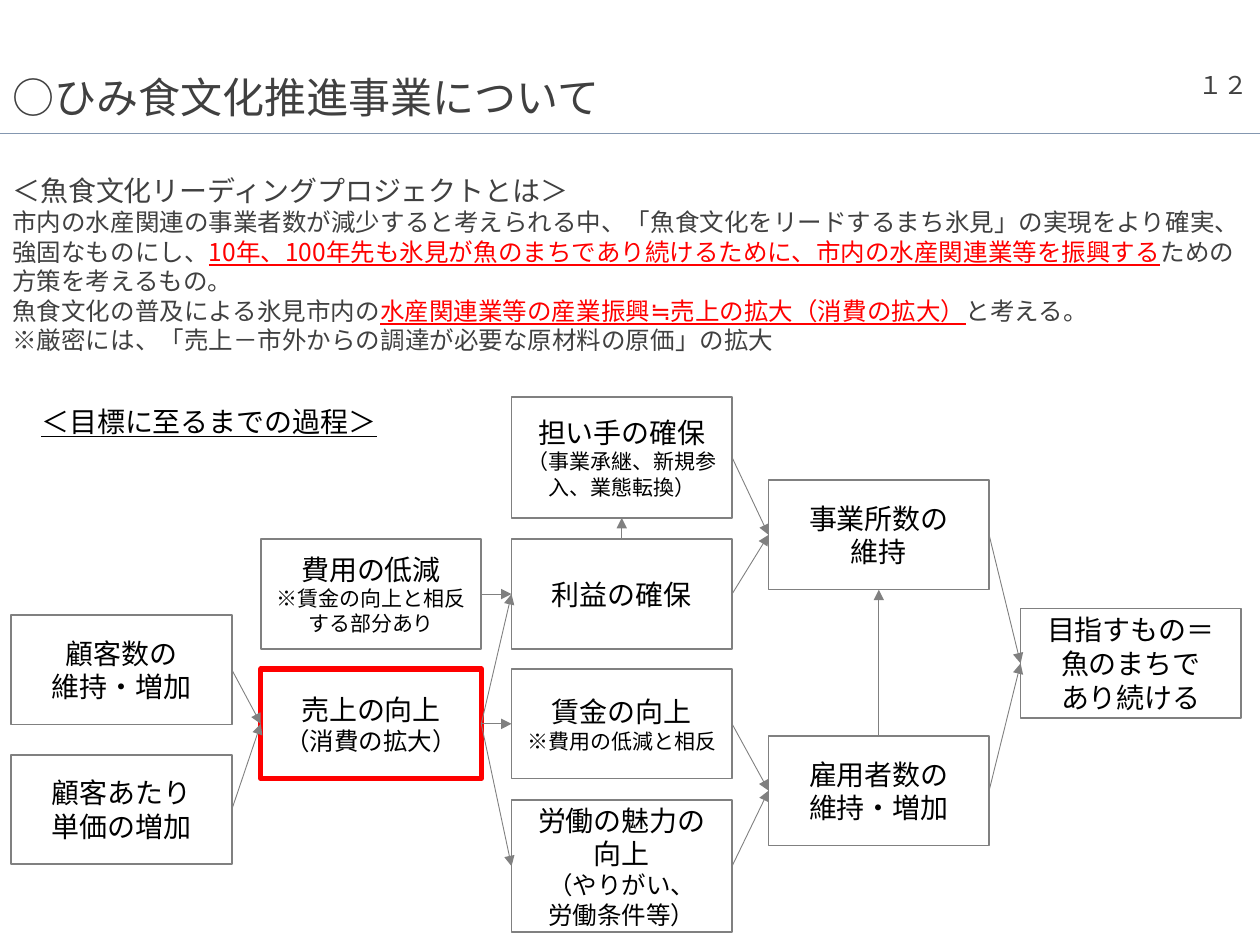
from lxml import etree
from pptx import Presentation
from pptx.dml.color import RGBColor
from pptx.enum.shapes import MSO_CONNECTOR, MSO_SHAPE
from pptx.enum.text import MSO_ANCHOR, PP_ALIGN
from pptx.oxml.ns import qn
from pptx.util import Inches, Pt

RECT = MSO_SHAPE.RECTANGLE
LINE = MSO_CONNECTOR.STRAIGHT
LEFT, MID, RIGHT = PP_ALIGN.LEFT, PP_ALIGN.CENTER, PP_ALIGN.RIGHT
CENTER, TOP = MSO_ANCHOR.MIDDLE, MSO_ANCHOR.TOP
FACE = "Noto Sans CJK JP"
COLORS = {"ink": "000000", "dark": "404040", "grey": "808080",
          "red": "FF0000", "rule": "8497B0", "white": "FFFFFF"}

# Left edges of the five columns, and the size of a box
COLS = [0.09, 2.07, 4.06, 6.1, 8.1]
BOX_W, BOX_H = 1.75, 0.87

# name: (column, top, height, [(text, size), ...])
BOXES = {
    "guests": (0, 4.88, BOX_H, [("顧客数の\n維持・増加", 16)]),
    "spend": (0, 5.99, BOX_H, [("顧客あたり", 16), ("単価の増加", 16)]),
    "cost": (1, 4.28, BOX_H, [("費用の低減", 16),
                              ("※賃金の向上と相反\nする部分あり", 12)]),
    "sales": (1, 5.31, BOX_H, [("売上の向上", 16), ("（消費の拡大）", 14)]),
    "heirs": (2, 3.15, 0.96, [("担い手の確保", 16),
                              ("（事業承継、新規参入、業態転換）", 12)]),
    "profit": (2, 4.28, BOX_H, [("利益の確保", 16)]),
    "wages": (2, 5.31, BOX_H, [("賃金の向上", 16), ("※費用の低減と相反", 12)]),
    "appeal": (2, 6.35, 1.05, [("労働の魅力の", 16), ("向上", 16),
                               ("（やりがい、\n労働条件等）", 14)]),
    "firms": (3, 3.81, BOX_H, [("事業所数の", 16), ("維持", 16)]),
    "staff": (3, 5.84, BOX_H, [("雇用者数の\n維持・増加", 16)]),
    "goal": (4, 4.83, BOX_H, [("目指すもの＝", 16), ("魚のまちで", 16),
                              ("あり続ける", 16)]),
}
ACROSS = [("guests", "sales"), ("spend", "sales"), ("cost", "profit"),
          ("sales", "profit"), ("sales", "wages"), ("sales", "appeal"),
          ("heirs", "firms"), ("profit", "firms"), ("wages", "staff"),
          ("appeal", "staff"), ("firms", "goal"), ("staff", "goal")]
UPWARD = [("profit", "heirs"), ("staff", "firms")]

# Runs between bars are marked in red
INTRO = [
    ("＜魚食文化リーディングプロジェクトとは＞", 16),
    ("市内の水産関連の事業者数が減少すると考えられる中、「魚食文化をリードするまち氷見」"
     "の実現をより確実、強固なものにし、|10年、100年先も氷見が魚のまちであり続けるために、"
     "市内の水産関連業等を振興する|ための方策を考えるもの。", 14),
    ("魚食文化の普及による氷見市内の|水産関連業等の産業振興≒売上の拡大（消費の拡大）|"
     "と考える。\n※厳密には、「売上－市外からの調達が必要な原材料の原価」の拡大", 14),
]


def color(name):
    return RGBColor.from_string(COLORS[name])


def style(para, size, ink, align):
    para.alignment = align
    font = para.font
    font.name, font.size = FACE, Pt(size)
    font.color.rgb = color(ink)
    base = para._p.pPr.find(qn("a:defRPr"))
    etree.SubElement(base, qn("a:ea"), typeface=FACE)


def write(shape, paras, ink, align=LEFT, anchor=CENTER, wrap=True):
    frame = shape.text_frame
    frame.word_wrap, frame.vertical_anchor = wrap, anchor
    for i, (text, size) in enumerate(paras):
        para = frame.add_paragraph() if i else frame.paragraphs[0]
        style(para, size, ink, align)
        for j, part in enumerate(text.split("|")):
            for k, row in enumerate(part.split("\n")):
                if k:
                    para.add_line_break()
                run = para.add_run()
                run.text = row
                if j % 2:
                    run.font.color.rgb = color("red")
                    run.font.underline = True
    return frame


def add_text(slide, area, text, size, ink, **opts):
    box = slide.shapes.add_textbox(*map(Inches, area))
    return write(box, [(text, size)], ink, **opts)


def add_rect(slide, area, paras, ink, edge=None, width=1, align=LEFT):
    rect = slide.shapes.add_shape(RECT, *map(Inches, area))
    rect.shadow.inherit = False
    rect.fill.solid()
    rect.fill.fore_color.rgb = color("white")
    if edge:
        rect.line.color.rgb = color(edge)
        rect.line.width = Pt(width)
    else:
        rect.line.fill.background()
    write(rect, paras, ink, align)
    return rect


def add_line(slide, ends, ink):
    line = slide.shapes.add_connector(LINE, *map(Inches, ends))
    line.line.color.rgb = color(ink)
    line.line.width = Pt(0.5)
    etree.SubElement(line._element.spPr, qn("a:effectLst"))
    return line


def add_arrow(slide, start, out, end, into):
    line = add_line(slide, (0, 0, 0, 0), "grey")
    line.begin_connect(start, out)
    line.end_connect(end, into)
    etree.SubElement(line.line._get_or_add_ln(), qn("a:tailEnd"), type="triangle")


def add_flow(slide):
    boxes = {}
    for name, (col, top, high, paras) in BOXES.items():
        edge, width = ("red", 3) if name == "sales" else ("grey", 1)
        area = (COLS[col], top, BOX_W, high)
        boxes[name] = add_rect(slide, area, paras, "ink", edge, width, MID)
    for start, end in ACROSS:
        add_arrow(slide, boxes[start], 3, boxes[end], 1)
    for start, end in UPWARD:
        add_arrow(slide, boxes[start], 0, boxes[end], 2)


def main():
    deck = Presentation()
    deck.slide_width, deck.slide_height = Inches(10), Inches(7.5)
    slide = deck.slides.add_slide(deck.slide_layouts[6])

    # Header
    add_line(slide, (0, 1.06, 10, 1.06), "rule")
    title = add_text(slide, (0, 0.62, 9.48, 0.35),
                     "○ひみ食文化推進事業について", 24, "dark")
    title.paragraphs[0].line_spacing = 0.9
    add_text(slide, (7.75, 0.38, 2.25, 0.59), "１２", 14, "dark", align=RIGHT)

    # Introduction
    add_rect(slide, (0, 1.14, 10, 1.91), INTRO, "dark")

    # Steps towards the goal
    head = add_text(slide, (0.23, 3.16, 2.89, 0.37), "＜目標に至るまでの過程＞",
                    16, "ink", anchor=TOP, wrap=False)
    head.paragraphs[0].font.underline = True
    add_flow(slide)

    deck.save("out.pptx")


if __name__ == "__main__":
    main()
